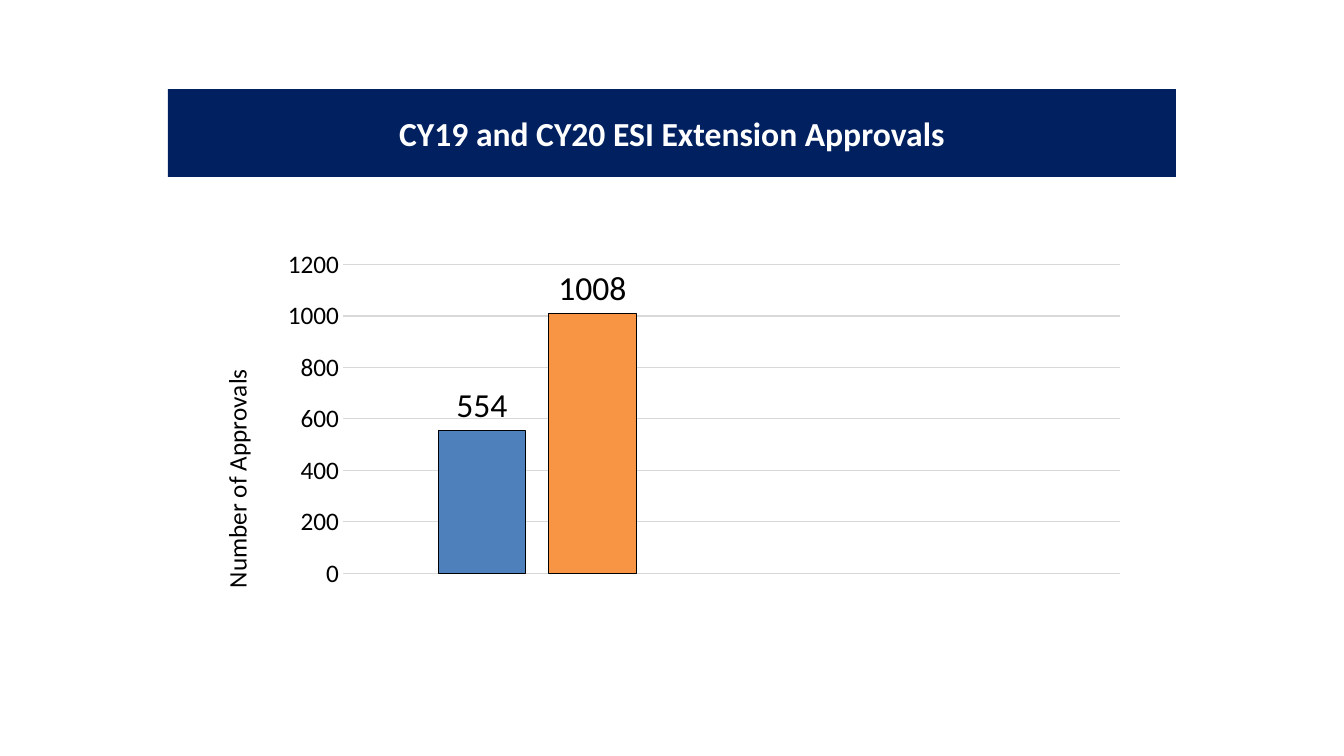
from lxml import etree
from pptx import Presentation
from pptx import util as u
from pptx.chart import data
from pptx.dml.color import RGBColor
from pptx.enum import chart as ch, shapes, text
from pptx.oxml.ns import qn

THEME = {
    "font": "Calibri", "navy": "002060", "white": "FFFFFF", "black": "000000",
    "grid": "D9D9D9", "bars": {"2019": "4E81BB", "2020": "F79545"},
    "axis_size": 18, "large_size": 24, "line": 0.75,
}


def style_font(font, size, colour, bold=False):
    for name, value in {"name": THEME["font"], "size": u.Pt(size), "bold": bold}.items():
        setattr(font, name, value)
    font.color.rgb = RGBColor.from_string(colour)


def place(element, index, **shares):
    """Set a manual layout, in shares of the chart's size."""
    for old in element.findall(qn("c:layout")):
        element.remove(old)
    layout = etree.Element(qn("c:layout"))
    manual = etree.SubElement(layout, qn("c:manualLayout"))
    for tag, value in shares.items():
        etree.SubElement(manual, qn(f"c:{tag}")).set("val", str(value))
    element.insert(index, layout)


deck = Presentation()
deck.slide_width, deck.slide_height = u.Inches(13.33), u.Inches(7.5)
W, H = deck.slide_width, deck.slide_height
slide = deck.slides.add_slide(deck.slide_layouts[6])

# Heading band: three quarters of the slide's width, centred
heading = slide.shapes.add_shape(
    shapes.MSO_SHAPE.RECTANGLE, int(W / 8), int(H * 0.118), int(W * 0.75), int(H * 0.116))
heading.shadow.inherit = False
heading.fill.solid()
heading.fill.fore_color.rgb = RGBColor.from_string(THEME["navy"])
heading.line.fill.background()
heading.text_frame.word_wrap = True
heading.text_frame.vertical_anchor = text.MSO_ANCHOR.MIDDLE
heading_line = heading.text_frame.paragraphs[0]
heading_line.alignment = text.PP_ALIGN.CENTER
heading_run = heading_line.add_run()
heading_run.text = "CY19 and CY20 ESI Extension Approvals"
style_font(heading_run.font, THEME["large_size"], THEME["white"], bold=True)

# Approvals per year
approvals = data.CategoryChartData()
approvals.categories = ["1", "2"]
approvals.add_series("2019", (554, None))
approvals.add_series("2020", (1008, None))
chart = slide.shapes.add_chart(
    ch.XL_CHART_TYPE.COLUMN_CLUSTERED, int(W * 0.153), int(H * 0.319),
    int(W * 0.695), int(H * 0.564), approvals).chart
chart.has_title = chart.has_legend = False
style_font(chart.font, THEME["axis_size"], THEME["black"])
bars = chart.plots[0]
for name, value in {"gap_width": 219, "overlap": -27, "vary_by_categories": False}.items():
    setattr(bars, name, value)

# Bars and their values
for series in bars.series:
    series.format.fill.solid()
    series.format.fill.fore_color.rgb = RGBColor.from_string(THEME["bars"][series.name])
    series.format.line.width = u.Pt(THEME["line"])
    series.format.line.color.rgb = RGBColor.from_string(THEME["black"])
    labels = series.data_labels
    labels.show_value = True
    labels.position = ch.XL_LABEL_POSITION.OUTSIDE_END
    style_font(labels.font, THEME["large_size"], THEME["black"])

# Axes and gridlines
chart.category_axis.visible = False
count_axis = chart.value_axis
for name, value in {"minimum_scale": 0, "maximum_scale": 1200, "major_unit": 200,
                    "major_tick_mark": ch.XL_TICK_MARK.NONE,
                    "minor_tick_mark": ch.XL_TICK_MARK.NONE,
                    "has_major_gridlines": True}.items():
    setattr(count_axis, name, value)
style_font(count_axis.tick_labels.font, THEME["axis_size"], THEME["black"])
count_axis.format.line.fill.background()
gridline = count_axis.major_gridlines.format.line
gridline.width = u.Pt(THEME["line"])
gridline.color.rgb = RGBColor.from_string(THEME["grid"])

# Axis title, read upwards
axis_title = count_axis.axis_title
axis_run = axis_title.text_frame.paragraphs[0].add_run()
axis_run.text = "Number of Approvals"
style_font(axis_run.font, THEME["axis_size"], THEME["black"])
title_element = count_axis._element.find(qn("c:title"))
turn = title_element.find(".//" + qn("a:bodyPr"))
turn.set("rot", "-5400000")
turn.set("vert", "horz")

# Places within the chart
place(title_element, 1, xMode="edge", yMode="edge", x=0.01, y=0.29)
place(chart._chartSpace.find(".//" + qn("c:plotArea")), 0, layoutTarget="inner",
      xMode="edge", yMode="edge", x=0.147, y=0.055, w=0.832, h=0.724)

deck.save("out.pptx")
